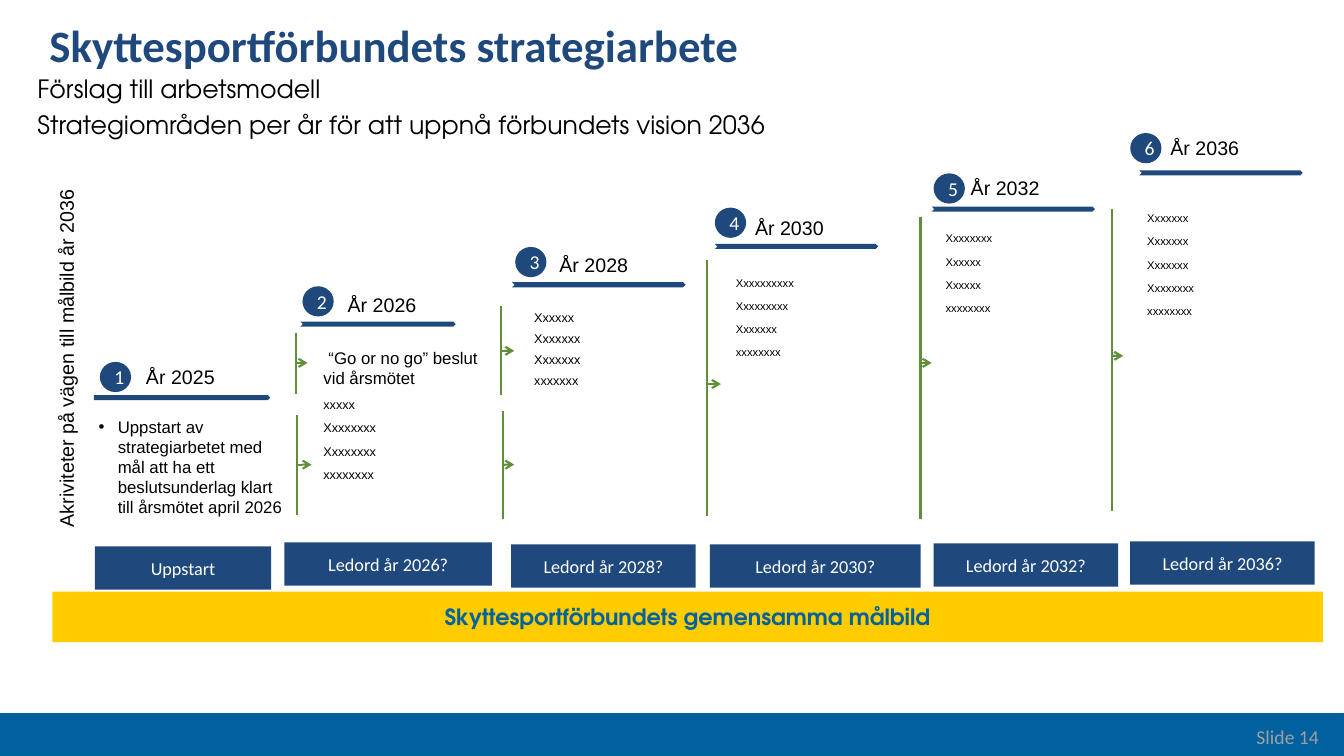
"""Builds the strategy staircase slide, from start-up in 2025 to the vision for 2036."""
from lxml import etree
from pptx import Presentation
from pptx.dml.color import RGBColor
from pptx.enum import shapes, text
from pptx.oxml.ns import qn
from pptx.util import Inches, Pt

COLORS = {"navy": "1F497D", "blue": "00619E", "edge": "00629D", "yellow": "FFCC00",
          "green": "608E3A", "white": "FFFFFF", "black": "000000", "grey": "A0A0A0"}
BODY, LABEL, DISPLAY = "Arial", "Calibri", "TeX Gyre Adventor"

TITLE = "Skyttesportförbundets strategiarbete"
SUBTITLE = ["Förslag till arbetsmodell",
            "Strategiområden per år för att uppnå förbundets vision 2036"]
VISION = "Skyttesportförbundets gemensamma målbild"
AXIS = "Akriviteter på vägen till målbild år 2036"
FOOTER = "Slide 14"

# fmt: off
STAGES = [
    {"year": "År 2025", "year_at": (1.35, 3.57), "dot": (0.99, 3.59),
     "bar": (0.93, 3.92, 1.75), "word": "Uppstart", "word_at": (0.94, 5.42, 1.75)},
    {"year": "År 2026", "year_at": (3.35, 2.86), "dot": (3.0, 2.84),
     "bar": (2.98, 3.19, 1.54), "word": "Ledord år 2026?", "word_at": (2.82, 5.38, 2.06)},
    {"year": "År 2028", "year_at": (5.45, 2.46), "dot": (5.11, 2.45),
     "bar": (5.08, 2.8, 1.72), "word": "Ledord år 2028?", "word_at": (5.07, 5.4, 1.83)},
    {"year": "År 2030", "year_at": (7.39, 2.09), "dot": (7.09, 2.06),
     "bar": (7.09, 2.42, 1.62), "word": "Ledord år 2030?", "word_at": (7.04, 5.4, 2.09)},
    {"year": "År 2032", "year_at": (9.53, 1.7), "dot": (9.26, 1.72),
     "bar": (9.24, 2.05, 1.62), "word": "Ledord år 2032?", "word_at": (9.26, 5.39, 1.83)},
    {"year": "År 2036", "year_at": (11.51, 1.3), "dot": (11.21, 1.32),
     "bar": (11.3, 1.69, 1.62), "word": "Ledord år 2036?", "word_at": (11.21, 5.37, 1.83)},
]
# fmt: on

START = "Uppstart av strategiarbetet med mål att ha ett beslutsunderlag klart till årsmötet april 2026"
DECISION = "“Go or no go” beslut vid årsmötet"
DECISION_ITEMS = ["xxxxx", "Xxxxxxxx", "Xxxxxxxx", "xxxxxxxx"]

ACTIVITIES = [
    ((5.2, 3.03, 1.38, 0.88), 9, 4, ["Xxxxxx", "Xxxxxxx", "Xxxxxxx", "xxxxxxx"]),
    ((7.2, 2.69, 1.85, 0.93), 8, 7, ["Xxxxxxxxxx", "Xxxxxxxxx", "Xxxxxxx", "xxxxxxxx"]),
    ((9.28, 2.25, 1.67, 1.4), 8, 7, ["Xxxxxxxx", "Xxxxxx", "Xxxxxx", "xxxxxxxx"]),
    ((11.28, 2.05, 1.67, 1.4), 8, 7,
     ["Xxxxxxx", "Xxxxxxx", "Xxxxxxx", "Xxxxxxxx", "xxxxxxxx"]),
]

GATES = [
    (2.94, 3.3, 3.91, 3.6, 0.11), (2.95, 4.12, 5.11, 4.61, 0.14),
    (4.97, 3.04, 3.92, 3.48, 0.13), (4.99, 4.08, 5.15, 4.61, 0.11),
    (7.01, 2.58, 5.12, 3.81, 0.14), (9.13, 2.15, 5.15, 3.6, 0.11),
    (11.03, 2.07, 5.07, 3.53, 0.11),
]


def rgb(name):
    return RGBColor.from_string(COLORS[name])


def write(para, words, size, font, color, bold=False, align=text.PP_ALIGN.LEFT):
    para.alignment = align
    span = para.add_run()
    span.text = words
    span.font.size, span.font.name, span.font.bold = Pt(size), font, bold
    span.font.color.rgb = rgb(color)


def add_text(page, at):
    frame = page.shapes.add_textbox(*map(Inches, at)).text_frame
    frame.word_wrap = True
    return frame


def add_lines(frame, lines, size, font, before=0, after=0):
    for number, words in enumerate(lines):
        para = frame.add_paragraph() if number else frame.paragraphs[0]
        para.space_before = Pt(before if number else 0)
        para.space_after = Pt(after)
        write(para, words, size, font, "black")


def add_block(page, kind, at, fill, words="", size=14, font=LABEL, color="white", bold=False):
    block = page.shapes.add_shape(kind, *map(Inches, at))
    block.shadow.inherit = False
    block.fill.solid()
    block.fill.fore_color.rgb = rgb(fill)
    block.line.fill.background()
    if words:
        block.text_frame.vertical_anchor = text.MSO_ANCHOR.MIDDLE
        write(block.text_frame.paragraphs[0], words, size, font, color, bold,
              text.PP_ALIGN.CENTER)
    return block


def add_line(page, start, end, arrow=False):
    line = page.shapes.add_connector(
        shapes.MSO_CONNECTOR.STRAIGHT, *map(Inches, start + end))
    line.line.color.rgb, line.line.width = rgb("green"), Pt(1.5)
    etree.SubElement(line._element.spPr, qn("a:effectLst"))
    if arrow:
        etree.SubElement(line.line._get_or_add_ln(), qn("a:tailEnd"), type="arrow")


def add_headings(page):
    title = page.shapes.title
    title.left, title.top, title.width, title.height = map(Inches, (0.39, 0.23, 12.6, 0.43))
    title.text_frame.auto_size = text.MSO_AUTO_SIZE.NONE
    title.text_frame.vertical_anchor = text.MSO_ANCHOR.MIDDLE
    write(title.text_frame.paragraphs[0], TITLE, 32, LABEL, "navy", bold=True)

    subtitle = add_text(page, (0.37, 0.73, 12.6, 0.55))
    subtitle.margin_left = subtitle.margin_right = 0
    subtitle.margin_top = subtitle.margin_bottom = 0
    add_lines(subtitle, SUBTITLE, 18, DISPLAY, before=3.6)


def add_frame(page):
    kind = shapes.MSO_SHAPE.RECTANGLE
    band = add_block(page, kind, (0, 7.08, 13.33, 0.42), "blue")
    band.line.color.rgb, band.line.width = rgb("edge"), Pt(0.75)
    write(add_text(page, (7.67, 7.14, 5.51, 0.44)).paragraphs[0], FOOTER, 14, LABEL, "grey",
          align=text.PP_ALIGN.RIGHT)
    add_block(page, kind, (0.52, 5.87, 12.6, 0.5), "yellow", VISION, 16, DISPLAY, "edge", True)

    axis = add_text(page, (0.46, 1.64, 0.3, 3.67))
    axis.margin_left = axis.margin_right = Inches(0.08)
    axis.margin_top = axis.margin_bottom = Inches(0.08)
    axis._txBody.bodyPr.set("vert", "vert270")
    add_lines(axis, [AXIS], 14, BODY)


def add_stages(page):
    kinds = shapes.MSO_SHAPE
    for number, stage in enumerate(STAGES, 1):
        bar = kinds.PENTAGON if number == 1 else kinds.CHEVRON
        add_block(page, bar, stage["bar"] + (0.05,), "navy")
        add_block(page, kinds.FLOWCHART_CONNECTOR, stage["dot"] + (0.31, 0.3), "navy",
                  str(number))
        add_lines(add_text(page, stage["year_at"] + (1.2, 0.34)), [stage["year"]], 14, BODY)
        add_block(page, kinds.RECTANGLE, stage["word_at"] + (0.43,), "navy", stage["word"], 13)


def add_activities(page):
    start = add_text(page, (0.88, 4.08, 2.03, 1.35))
    props = start.paragraphs[0]._p.get_or_add_pPr()
    props.set("marL", str(Inches(0.19)))
    props.set("indent", str(-Inches(0.19)))
    etree.SubElement(props, qn("a:buFont"), typeface=BODY)
    etree.SubElement(props, qn("a:buChar"), char="•")
    add_lines(start, [START], 12, BODY, after=6)

    decision = add_text(page, (3.11, 3.4, 1.83, 1.99))
    add_lines(decision, [DECISION] + DECISION_ITEMS, 9, BODY, after=6)
    lead = decision.paragraphs[0]
    lead.runs[0].font.size = Pt(12)
    lead._p.get_or_add_pPr().set("indent", str(Inches(0.05)))

    for at, size, before, lines in ACTIVITIES:
        add_lines(add_text(page, at), lines, size, BODY, before=before)


def main():
    deck = Presentation()
    deck.slide_width, deck.slide_height = Inches(13.33), Inches(7.5)
    page = deck.slides.add_slide(deck.slide_layouts[5])
    add_headings(page)
    add_frame(page)
    for x, top, bottom, middle, reach in GATES:
        add_line(page, (x, top), (x, bottom))
        add_line(page, (x, middle), (x + reach, middle), arrow=True)
    add_stages(page)
    add_activities(page)
    deck.save("out.pptx")


if __name__ == "__main__":
    main()
